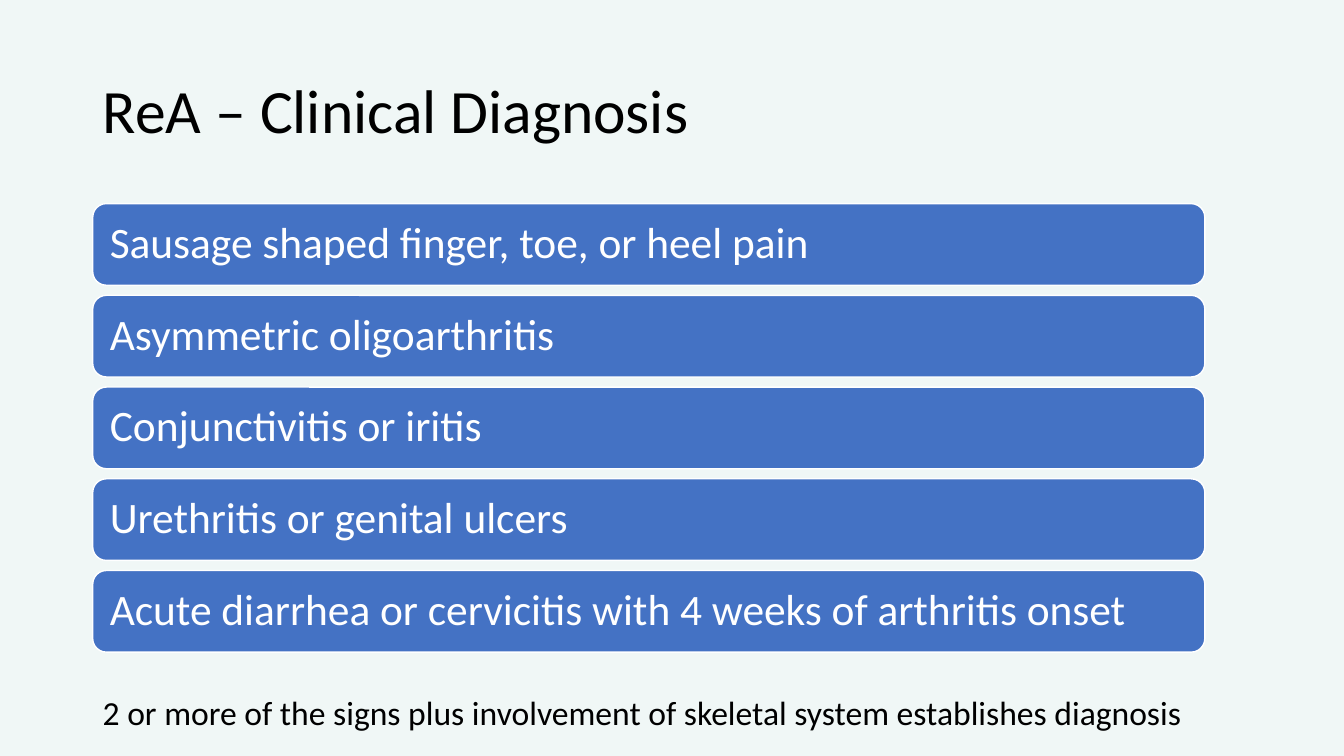
from dataclasses import dataclass

from pptx import Presentation
from pptx.dml.color import RGBColor
from pptx.enum.shapes import MSO_SHAPE as Kind
from pptx.enum.text import MSO_ANCHOR as Anchor, MSO_AUTO_SIZE as Fit, PP_ALIGN as Align
from pptx.shapes.autoshape import Shape
from pptx.slide import Slide
from pptx.text.text import TextFrame
from pptx.util import Inches, Pt

FONT = "Calibri"
BLACK, WHITE, BLUE, MINT = "000000", "FFFFFF", "4472C4", "F0F7F6"
LEFT, WIDE = 0.92, 11.03
TOP, STEP, HIGH = 2.02, 0.91, 0.81


@dataclass
class Sign:
    text: str
    top: float


def color(code: str) -> RGBColor:
    return RGBColor.from_string(code)


def place(shape: Shape, left: float, top: float, width: float, height: float) -> None:
    shape.left, shape.top = Inches(left), Inches(top)
    shape.width, shape.height = Inches(width), Inches(height)


def write(frame: TextFrame, text: str, size: float, code: str,
          anchor: Anchor, space: float) -> None:
    frame.word_wrap = True
    frame.auto_size = Fit.NONE
    frame.vertical_anchor = anchor
    para = frame.paragraphs[0]
    para.alignment = Align.LEFT
    para.line_spacing = space
    run = para.add_run()
    run.text = text
    run.font.name = FONT
    run.font.size = Pt(size)
    run.font.color.rgb = color(code)


def draw_sign(slide: Slide, sign: Sign) -> None:
    bar = slide.shapes.add_shape(Kind.ROUNDED_RECTANGLE, Inches(LEFT), Inches(sign.top),
                                 Inches(WIDE), Inches(HIGH))
    bar.shadow.inherit = False
    bar.fill.solid()
    bar.fill.fore_color.rgb = color(BLUE)
    bar.line.color.rgb = color(WHITE)
    bar.line.width = Pt(1)
    frame = bar.text_frame
    frame.margin_left = frame.margin_right = Inches(0.13)
    write(frame, sign.text, 31, WHITE, Anchor.MIDDLE, 0.9)


def main() -> None:
    deck = Presentation()
    deck.slide_width, deck.slide_height = Inches(13.33), Inches(7.5)
    slide = deck.slides.add_slide(deck.slide_layouts[5])
    slide.background.fill.solid()
    slide.background.fill.fore_color.rgb = color(MINT)

    title = slide.shapes.title
    place(title, LEFT, 0.4, 11.5, 1.45)
    write(title.text_frame, "ReA – Clinical Diagnosis", 44, BLACK, Anchor.MIDDLE, 0.9)

    texts = [
        "Sausage shaped finger, toe, or heel pain",
        "Asymmetric oligoarthritis",
        "Conjunctivitis or iritis",
        "Urethritis or genital ulcers",
        "Acute diarrhea or cervicitis with 4 weeks of arthritis onset",
    ]
    for row, text in enumerate(texts):
        draw_sign(slide, Sign(text, TOP + row * STEP))

    note = slide.shapes.add_textbox(Inches(LEFT), Inches(6.82), Inches(WIDE), Inches(0.5))
    write(note.text_frame,
          "2 or more of the signs plus involvement of skeletal system establishes diagnosis",
          24, BLACK, Anchor.TOP, 1.0)

    deck.save("out.pptx")


if __name__ == "__main__":
    main()
